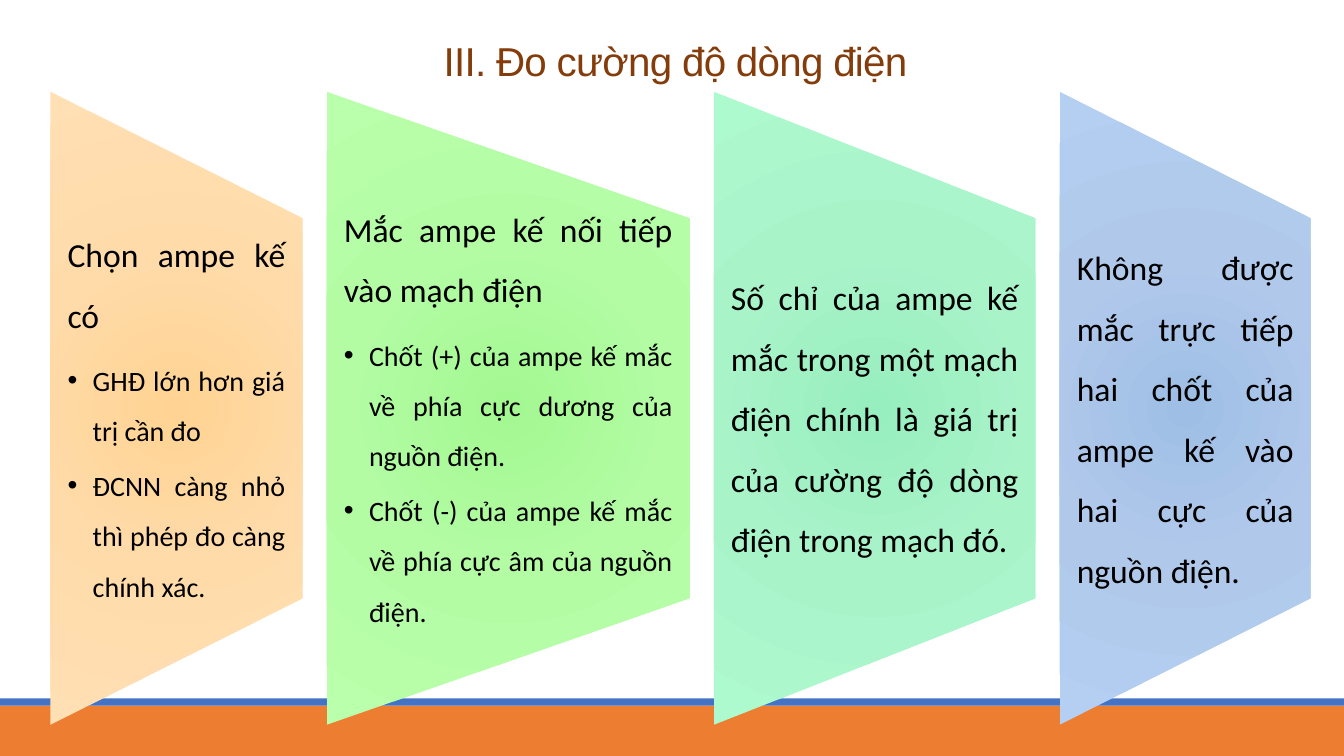
from pptx import Presentation
from pptx.dml.color import RGBColor
from pptx.enum.shapes import MSO_SHAPE as Shape
from pptx.enum.text import MSO_ANCHOR as Anchor, PP_ALIGN as Align
from pptx.oxml import parse_xml
from pptx.oxml.ns import nsdecls
from pptx.util import Inches, Pt

WIDTH, HEIGHT = 13.33, 7.5
ORANGE = RGBColor(0xED, 0x7D, 0x31)
BLUE = RGBColor(0x44, 0x72, 0xC4)
BROWN = RGBColor(0x84, 0x3C, 0x0B)
BLACK = RGBColor(0, 0, 0)

TITLE = "III. Đo cường độ dòng điện"
BANDS = [(7, 0.5, ORANGE), (6.93, 0.07, BLUE)]
PANELS = [
    (2.5, ("FFD393", "FFDBA9", "FFDFB4"), "Chọn ampe kế có",
     ["GHĐ lớn hơn giá trị cần đo",
      "ĐCNN càng nhỏ thì phép đo càng chính xác."]),
    (3.6, ("A3F891", "B3FCA4", "BAFFAC"), "Mắc ampe kế nối tiếp vào mạch điện",
     ["Chốt (+) của ampe kế mắc về phía cực dương của nguồn điện.",
      "Chốt (-) của ampe kế mắc về phía cực âm của nguồn điện."]),
    (3.19, ("97EEBE", "A9F3C9", "ADFACE"),
     "Số chỉ của ampe kế mắc trong một mạch điện chính là giá trị "
     "của cường độ dòng điện trong mạch đó.", []),
    (2.49, ("9FBEE5", "B0C9EB", "B4CFF2"),
     "Không được mắc trực tiếp hai chốt của ampe kế vào hai cực của nguồn điện.", []),
]
STOPS = (0, 45, 100)
PANEL_LEFT, PANEL_TOP, PANEL_HEIGHT, PANEL_GAP = 0.5, 0.91, 6.28, 0.24
TEXT_SHARE = 0.6


def add_plain_shape(page, kind, left, top, width, height):
    shape = page.shapes.add_shape(kind, *map(Inches, (left, top, width, height)))
    shape.shadow.inherit = False
    shape.line.fill.background()
    return shape


def add_text_frame(page, left, top, width, height, margins):
    box = page.shapes.add_textbox(*map(Inches, (left, top, width, height)))
    frame = box.text_frame
    frame.word_wrap = True
    frame.vertical_anchor = Anchor.MIDDLE
    (frame.margin_left, frame.margin_top,
     frame.margin_right, frame.margin_bottom) = map(Inches, margins)
    return frame


def style(para, text, font, size, color, align):
    para.text = text
    para.alignment = align
    para.font.name, para.font.size = font, Pt(size)
    para.font.color.rgb = color


def fill_radially(shape, colors):
    stops = "".join(
        f'<a:gs pos="{stop * 1000}"><a:srgbClr val="{color}"/></a:gs>'
        for stop, color in zip(STOPS, colors))
    gradient = parse_xml(
        f'<a:gradFill {nsdecls("a")} rotWithShape="1"><a:gsLst>{stops}</a:gsLst>'
        '<a:path path="circle"><a:fillToRect l="100000" t="100000" '
        'r="100000" b="100000"/></a:path></a:gradFill>')
    shape.fill.background()
    properties = shape.element.spPr
    properties.replace(properties.find("./{*}noFill"), gradient)


def add_bullet(para):
    para.level = 1
    properties = para._p.get_or_add_pPr()
    properties.set("marL", str(Inches(0.25)))
    properties.set("indent", str(Inches(-0.25)))
    properties.append(parse_xml(f'<a:buFont {nsdecls("a")} typeface="Arial"/>'))
    properties.append(parse_xml(f'<a:buChar {nsdecls("a")} char="•"/>'))


def style_body(para, text, size, after):
    style(para, text, "Calibri", size, BLACK, Align.JUSTIFY)
    para.line_spacing = 1.5
    para.space_after = Pt(size * after)


def add_panel(page, left, width, colors, heading, points):
    middle = PANEL_TOP + PANEL_HEIGHT / 2
    shape = add_plain_shape(
        page, Shape.FLOWCHART_MANUAL_OPERATION,
        left + (width - PANEL_HEIGHT) / 2, middle - width / 2, PANEL_HEIGHT, width)
    shape.rotation = 270
    fill_radially(shape, colors)
    height = PANEL_HEIGHT * TEXT_SHARE
    frame = add_text_frame(page, left, middle - height / 2, width, height,
                           (0.17, 0, 0.17, 0))
    style_body(frame.paragraphs[0], heading, 24, 0.35)
    for point in points:
        para = frame.add_paragraph()
        style_body(para, point, 20, 0.15)
        add_bullet(para)


def main():
    """Build the slide on measuring electric current."""
    deck = Presentation()
    deck.slide_width, deck.slide_height = Inches(WIDTH), Inches(HEIGHT)
    page = deck.slides.add_slide(deck.slide_layouts[6])
    for top, height, color in BANDS:
        band = add_plain_shape(page, Shape.RECTANGLE, 0, top, WIDTH, height)
        band.fill.solid()
        band.fill.fore_color.rgb = color
    title = add_text_frame(page, 1.2, 0.31, 11, 0.77, (0.1, 0.05, 0.1, 0.24))
    para = title.paragraphs[0]
    style(para, TITLE, "Arial", 28.8, BROWN, Align.CENTER)
    para.runs[0].font._element.set("spc", "-50")
    left = PANEL_LEFT
    for width, colors, heading, points in PANELS:
        add_panel(page, left, width, colors, heading, points)
        left += width + PANEL_GAP
    deck.save("out.pptx")


if __name__ == "__main__":
    main()
